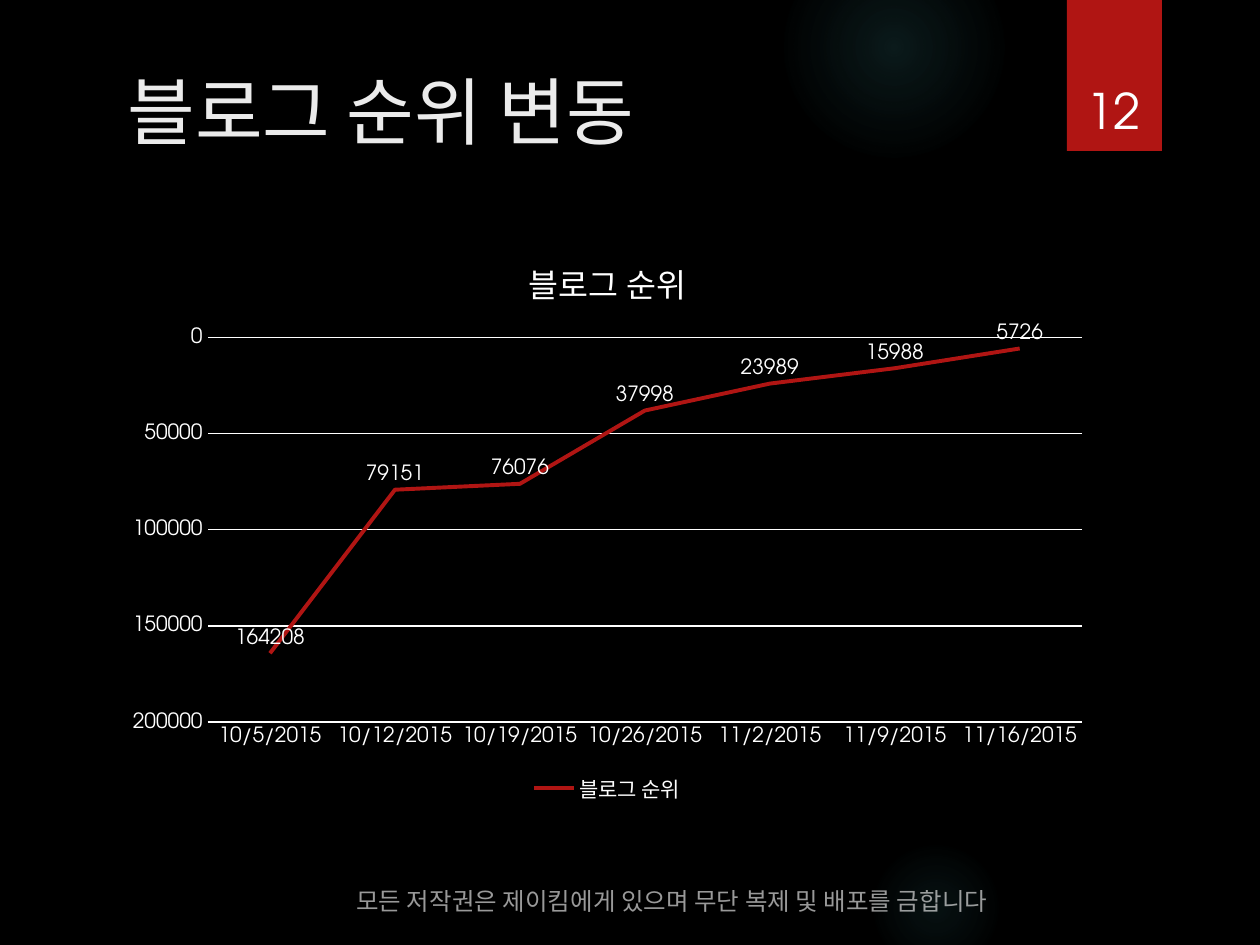
from lxml import etree
from pptx import Presentation
from pptx import util as u
from pptx.chart.data import CategoryChartData
from pptx.dml.color import RGBColor
from pptx.enum import chart as ch, shapes, text
from pptx.oxml import parse_xml
from pptx.oxml.ns import nsdecls, qn

EMU_PER_PX = 914400 / 126
FONT = "TeX Gyre Adventor"
BLACK = RGBColor(0x00, 0x00, 0x00)
WHITE = RGBColor(0xFF, 0xFF, 0xFF)
PALE = RGBColor(0xEB, 0xEB, 0xEB)
RED = RGBColor(0xB0, 0x15, 0x13)
TEAL = RGBColor(0x50, 0xB9, 0xC1)

RANKS = {
    "10/5/2015": 164208,
    "10/12/2015": 79151,
    "10/19/2015": 76076,
    "10/26/2015": 37998,
    "11/2/2015": 23989,
    "11/9/2015": 15988,
    "11/16/2015": 5726,
}


def emu(*lengths):
    return [u.Emu(round(length * EMU_PER_PX)) for length in lengths]


def style(font, size, color=WHITE):
    font.name, font.size, font.bold = FONT, u.Pt(size), False
    font.color.rgb = color


def add_glow(slide, box, stops):
    """Soft round light; stops are (position, opacity) in percent."""
    glow = slide.shapes.add_shape(shapes.MSO_SHAPE.OVAL, *emu(*box))
    glow.shadow.inherit = False
    glow.line.fill.background()
    glow.fill.background()
    stop_xml = "".join(
        f'<a:gs pos="{position * 1000}"><a:srgbClr val="{TEAL}">'
        f'<a:alpha val="{opacity * 1000}"/></a:srgbClr></a:gs>'
        for position, opacity in stops)
    gradient = parse_xml(
        f'<a:gradFill {nsdecls("a")} rotWithShape="1"><a:gsLst>{stop_xml}</a:gsLst>'
        '<a:path path="circle"><a:fillToRect l="50000" t="50000" r="50000" b="50000"/>'
        '</a:path></a:gradFill>')
    properties = glow.element.spPr
    properties.replace(properties.find(qn("a:noFill")), gradient)


def add_label(slide, box, wording, size, align):
    label = slide.shapes.add_textbox(*emu(*box))
    frame = label.text_frame
    frame.word_wrap = True
    frame.vertical_anchor = text.MSO_ANCHOR.BOTTOM
    paragraph = frame.paragraphs[0]
    paragraph.text = wording
    paragraph.alignment = align
    style(paragraph.font, size)
    return paragraph


def add_page_tab(slide, box, number):
    left, top, width, height = box
    tab = slide.shapes.add_shape(shapes.MSO_SHAPE.RECTANGLE, *emu(*box))
    tab.shadow.inherit = False
    tab.fill.solid()
    tab.fill.fore_color.rgb = RED
    tab.line.fill.background()
    add_label(slide, (left + 3, top + 40, width - 7, height - 45),
              number, 28, text.PP_ALIGN.CENTER)


def add_title(slide, box, wording):
    title = slide.shapes.title
    title.left, title.top, title.width, title.height = emu(*box)
    frame = title.text_frame
    frame.vertical_anchor = text.MSO_ANCHOR.MIDDLE
    paragraph = frame.paragraphs[0]
    paragraph.text = wording
    paragraph.alignment = text.PP_ALIGN.LEFT
    style(paragraph.font, 42, PALE)


def add_footer(slide, box, wording):
    paragraph = add_label(slide, box, wording, 14, text.PP_ALIGN.LEFT)
    for color in paragraph._p.iter(qn("a:srgbClr")):
        etree.SubElement(color, qn("a:alpha"), val="60000")


def white_line(line):
    line.color.rgb = WHITE
    line.width = u.Pt(0.75)


def add_rank_chart(slide, box, name):
    data = CategoryChartData()
    data.categories = list(RANKS)
    data.add_series(name, list(RANKS.values()))
    chart = slide.shapes.add_chart(
        ch.XL_CHART_TYPE.LINE, *emu(*box), data).chart
    style(chart.font, 12)

    chart.has_title = True
    heading = chart.chart_title.text_frame.paragraphs[0]
    heading.text = name
    style(heading.font, 18.6)
    chart.chart_title.include_in_layout = False

    chart.has_legend = True
    chart.legend.position = ch.XL_LEGEND_POSITION.BOTTOM
    chart.legend.include_in_layout = False
    style(chart.legend.font, 12)

    dates, ranks = chart.category_axis, chart.value_axis
    for axis in (dates, ranks):
        axis.major_tick_mark = axis.minor_tick_mark = ch.XL_TICK_MARK.NONE
        style(axis.tick_labels.font, 12)
    white_line(dates.format.line)
    ranks.format.line.fill.background()
    ranks.minimum_scale, ranks.maximum_scale = 0, 200000
    ranks.major_unit = 50000
    ranks.reverse_order = True
    ranks.crosses = ch.XL_AXIS_CROSSES.MAXIMUM
    white_line(ranks.major_gridlines.format.line)

    plot = chart.plots[0]
    plot.vary_by_categories = False
    rank_line = plot.series[0]
    rank_line.smooth = False
    rank_line.format.line.color.rgb = RED
    rank_line.format.line.width = u.Pt(2.25)
    labels = rank_line.data_labels
    labels.show_value = True
    labels.position = ch.XL_LABEL_POSITION.ABOVE
    style(labels.font, 12)


def build_ranking_slide(deck):
    slide = deck.slides.add_slide(deck.slide_layouts[5])
    slide.background.fill.solid()
    slide.background.fill.fore_color.rgb = BLACK
    add_glow(slide, (784, -63, 220, 220), [(0, 14), (36, 7), (73, 0), (100, 0)])
    add_glow(slide, (868, 840, 136, 136), [(0, 9), (36, 5), (66, 0), (100, 0)])
    add_page_tab(slide, (1067, 0, 95, 151), "12")
    add_title(slide, (115, 63, 925, 95), "블로그 순위 변동")
    add_rank_chart(slide, (113, 231, 989, 578), "블로그 순위")
    add_footer(slide, (344, 872, 779, 50),
               "모든 저작권은 제이킴에게 있으며 무단 복제 및 배포를 금합니다")


def main():
    deck = Presentation()
    deck.slide_width, deck.slide_height = emu(1260, 945)
    build_ranking_slide(deck)
    deck.save("out.pptx")


if __name__ == "__main__":
    main()
